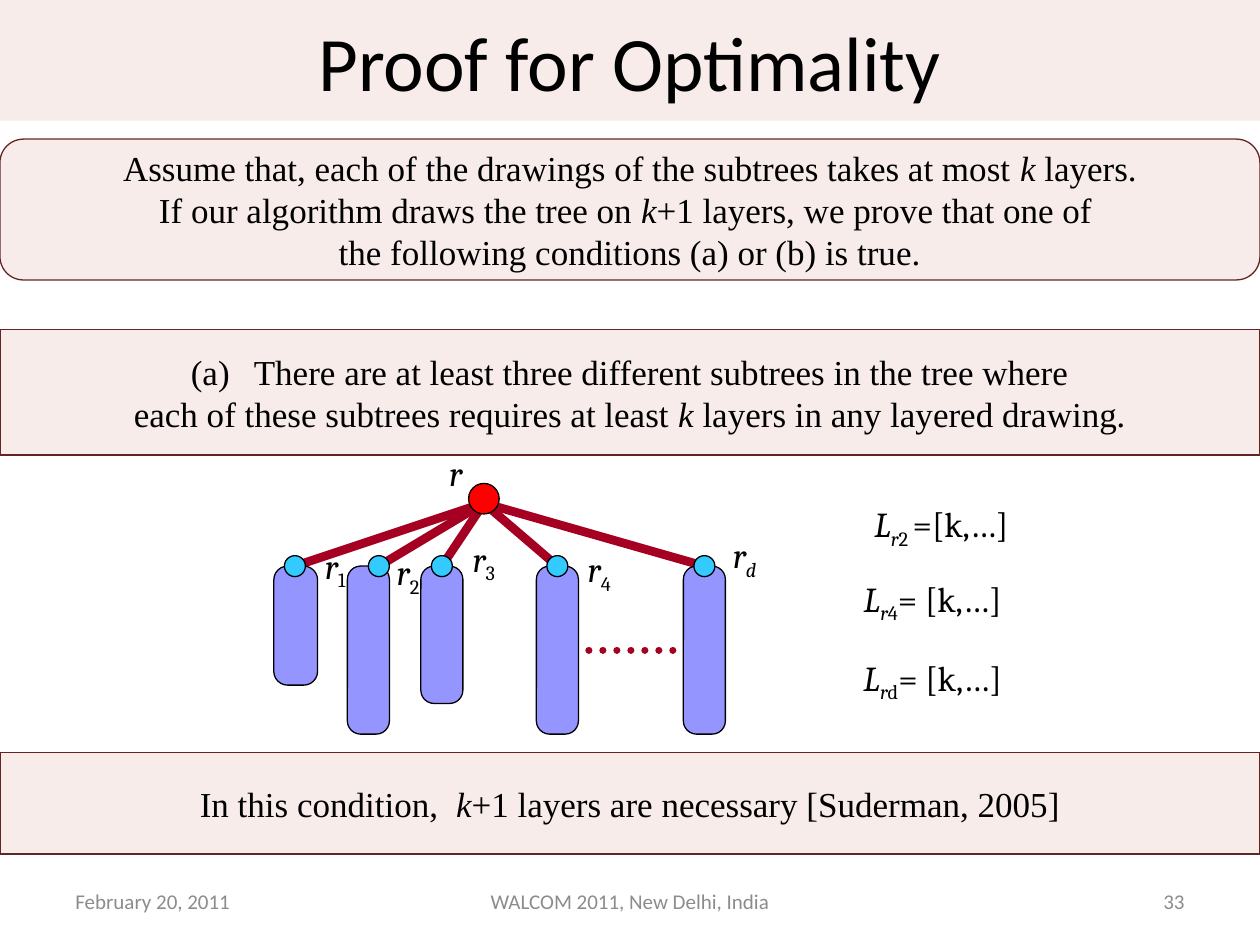
from lxml import etree
from pptx import Presentation
from pptx.dml.color import RGBColor
from pptx.enum.dml import MSO_LINE
from pptx.enum.shapes import MSO_CONNECTOR, MSO_SHAPE
from pptx.enum.text import MSO_ANCHOR, MSO_AUTO_SIZE, PP_ALIGN
from pptx.oxml.ns import qn
from pptx.util import Pt

LEFT, CENTER, RIGHT = PP_ALIGN.LEFT, PP_ALIGN.CENTER, PP_ALIGN.RIGHT
RECT, ROUND, OVAL = MSO_SHAPE.RECTANGLE, MSO_SHAPE.ROUNDED_RECTANGLE, MSO_SHAPE.OVAL
BLACK = RGBColor(0x00, 0x00, 0x00)
GREY = RGBColor(0x8C, 0x8C, 0x8C)
ROSE = RGBColor(0xE6, 0xB9, 0xB8)
MAROON = RGBColor(0x63, 0x25, 0x23)
CRIMSON = RGBColor(0xA5, 0x00, 0x21)
LILAC = RGBColor(0x95, 0x95, 0xFF)
CYAN = RGBColor(0x33, 0xCA, 0xFF)
RED = RGBColor(0xFF, 0x00, 0x00)
SANS, SERIF, MATH = "Calibri", "Times New Roman", "Cambria"
W, H = 720, 540

# Runs are (text, style); in a style, "i" is italic and "s" is subscript.
TITLE = "Proof for Optimality"
# shape, top, height, numbered first paragraph, paragraphs
BANNERS = [
    (ROUND, 79.5, 80.5, False, [
        [("Assume that, each of the drawings of the subtrees takes at most ", ""),
         ("k ", "i"), ("layers.", "")],
        [("If our algorithm draws the tree on ", ""), ("k", "i"),
         ("+1 layers, we prove that one of ", "")],
        [("the following conditions (a) or (b) is true.", "")]]),
    (RECT, 188.5, 71.5, True, [
        [("There are at least three different subtrees in the tree where", "")],
        [("each of these subtrees requires at least ", ""), ("k ", "i"),
         ("layers in any layered drawing", ""), (".", "i")]]),
    (RECT, 430, 58, False, [
        [("In this condition,  ", ""), ("k", "i"),
         ("+1 layers are necessary [Suderman, 2005]", "")]]),
]
# node centre x, bar left, bar width, bar height
SUBTREES = [
    (168.5, 156.5, 25, 68),
    (216.5, 198.5, 24, 96),
    (252.5, 240.5, 24, 78.5),
    (318.5, 306.5, 24, 96),
    (402.5, 390.5, 24, 96),
]
ROOT_X, ROOT_Y, ROOT_D = 276.5, 285, 17.5
EDGE_Y, NODE_Y, NODE_D = 287.5, 323.5, 12
DOTS_X, DOTS_Y = (384.5, 336.5), 371.5
# centre x, centre y, runs
NODE_LABELS = [
    (191.5, 324.5, [("r", "i"), ("1", "s")]),
    (234.5, 328.5, [("r", "i"), ("2 ", "s")]),
    (276.5, 320.5, [("r", "i"), ("3", "s")]),
    (342.5, 326.5, [("r", "i"), ("4", "s")]),
    (425.5, 318.5, [("r", "i"), ("d", "is")]),
    (260.5, 270, [("r", "i")]),
]
LAYER_LABELS = [
    (538, 301, [("L", "i"), ("r", "is"), ("2 ", "s"), ("=[k,…]", "")]),
    (533, 343.5, [("L", "i"), ("r", "is"), ("4", "s"), ("= [k,…]", "")]),
    (533, 388.5, [("L", "i"), ("r", "is"), ("d", "s"), ("= [k,…]", "")]),
]
# left, width, alignment, text
FOOTERS = [
    (36, 168, LEFT, "February 20, 2011"),
    (246, 228, CENTER, "WALCOM 2011, New Delhi, India"),
    (516, 168, RIGHT, "33"),
]


def put_text(sp, paragraphs, font, size, color=BLACK, align=CENTER, wrap=True):
    tf = sp.text_frame
    tf.word_wrap = wrap
    tf.auto_size = MSO_AUTO_SIZE.NONE
    tf.vertical_anchor = MSO_ANCHOR.MIDDLE
    for n, runs in enumerate(paragraphs):
        p = tf.add_paragraph() if n else tf.paragraphs[0]
        p.alignment = align
        for text, style in runs:
            r = p.add_run()
            r.text = text
            r.font.name, r.font.size = font, Pt(size)
            r.font.color.rgb = color
            r.font.italic = "i" in style
            if "s" in style:
                r.font._element.set("baseline", "-25000")


def tint(sp):
    """Fill with the translucent rose of the banners."""
    sp.fill.solid()
    sp.fill.fore_color.rgb = ROSE
    clr = sp.fill._xPr.find(qn("a:solidFill"))[0]
    etree.SubElement(clr, qn("a:alpha")).set("val", "27000")


def add_outlined(shapes, kind, x, y, w, h, fill=None, line=BLACK):
    sp = shapes.add_shape(kind, Pt(x), Pt(y), Pt(w), Pt(h))
    sp.shadow.inherit = False
    if fill is None:
        tint(sp)
    else:
        sp.fill.solid()
        sp.fill.fore_color.rgb = fill
    sp.line.color.rgb, sp.line.width = line, Pt(0.75)
    return sp


def add_circle(shapes, cx, cy, d, fill):
    add_outlined(shapes, OVAL, cx - d / 2, cy - d / 2, d, d, fill)


def add_line(shapes, x1, y1, x2, y2, width):
    ln = shapes.add_connector(MSO_CONNECTOR.STRAIGHT, Pt(x1), Pt(y1), Pt(x2), Pt(y2))
    ln.line.color.rgb, ln.line.width = CRIMSON, Pt(width)
    etree.SubElement(ln._element.spPr, qn("a:effectLst"))
    return ln


def add_label(shapes, cx, cy, runs):
    w, h = 36, 42
    sp = shapes.add_textbox(Pt(cx - w / 2), Pt(cy - h / 2), Pt(w), Pt(h))
    put_text(sp, [runs], MATH, 20, wrap=False)


def add_banner(shapes, kind, top, height, numbered, paragraphs):
    sp = add_outlined(shapes, kind, 0, top, W, height, line=MAROON)
    put_text(sp, paragraphs, SERIF, 20)
    for n, p in enumerate(sp.text_frame.paragraphs):
        pPr = p._p.get_or_add_pPr()
        pPr.set("marL", str(Pt(36)))
        pPr.set("indent", str(-Pt(36)))
        if numbered and n == 0:
            etree.SubElement(pPr, qn("a:buFont")).set("typeface", SERIF)
            etree.SubElement(pPr, qn("a:buAutoNum")).set("type", "alphaLcParenBoth")


def add_tree(shapes):
    for x, *_ in SUBTREES:
        add_line(shapes, ROOT_X, EDGE_Y, x, NODE_Y, 5)
    for x, left, w, h in SUBTREES:
        bar = add_outlined(shapes, ROUND, left, NODE_Y, w, h, LILAC)
        bar.adjustments[0] = 0.315
        add_circle(shapes, x, NODE_Y, NODE_D, CYAN)
    dots = add_line(shapes, DOTS_X[0], DOTS_Y, DOTS_X[1], DOTS_Y, 4)
    dots.line.dash_style = MSO_LINE.ROUND_DOT
    dots.line._ln.set("cap", "rnd")
    for label in NODE_LABELS:
        add_label(shapes, *label)


def main():
    prs = Presentation()
    prs.slide_width, prs.slide_height = Pt(W), Pt(H)
    s = prs.slides.add_slide(prs.slide_layouts[5])

    title = s.shapes.title
    title.left, title.top, title.width, title.height = Pt(0), Pt(0), Pt(W), Pt(69)
    tint(title)
    put_text(title, [[(TITLE, "")]], SANS, 44)

    for left, width, align, text in FOOTERS:
        sp = s.shapes.add_textbox(Pt(left), Pt(500.5), Pt(width), Pt(28.5))
        put_text(sp, [[(text, "")]], SANS, 12, GREY, align)
    for banner in BANNERS:
        add_banner(s.shapes, *banner)
    add_tree(s.shapes.add_group_shape().shapes)
    add_circle(s.shapes, ROOT_X, ROOT_Y, ROOT_D, RED)
    for label in LAYER_LABELS:
        add_label(s.shapes, *label)
    prs.save("out.pptx")


if __name__ == "__main__":
    main()
